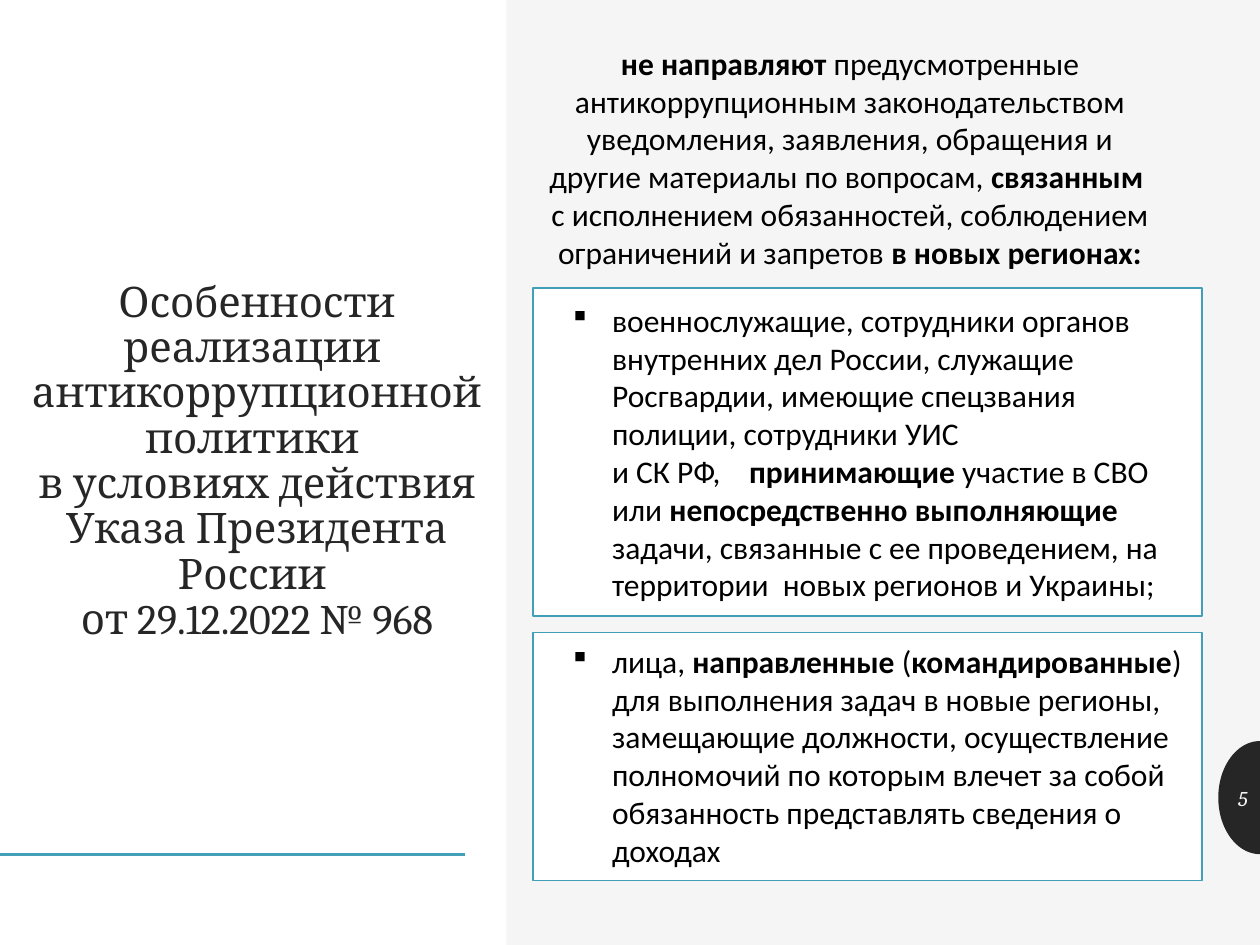
import math

from lxml import etree
from pptx import Presentation
from pptx.dml.color import RGBColor
from pptx.enum import shapes, text
from pptx.oxml.ns import qn
from pptx.util import Cm, Pt

COLORS = {"background": "F5F5F5", "panel": "FFFFFF", "dark": "262626",
          "accent": "439EB7", "body": "000000"}
RGB = {name: RGBColor.from_string(value) for name, value in COLORS.items()}


def set_font(paragraph, name, size, color):
    paragraph.font.name = name
    paragraph.font.size = Pt(size)
    paragraph.font.color.rgb = RGB[color]


def add_marked_text(paragraph, marked):
    """Add runs in which ** switches bold on and off and a newline is a line break."""
    set_font(paragraph, "Calibri", 18, "body")
    for i, part in enumerate(marked.split("**")):
        for j, line in enumerate(part.split("\n")):
            if j:
                paragraph.add_line_break()
            if line:
                run = paragraph.add_run()
                run.text = line
                run.font.bold = i % 2 == 1


prs = Presentation()
prs.slide_width, prs.slide_height = Cm(25.4), Cm(19.05)
slide = prs.slides.add_slide(prs.slide_layouts[5])
slide.background.fill.solid()
slide.background.fill.fore_color.rgb = RGB["background"]

# White left panel and the two framed boxes
for left, top, width, height, framed in [
    (0, 0, 10.21, 19.05, False),
    (10.74, 12.75, 13.49, 5.0, True),
    (10.74, 5.8, 13.49, 6.62, True),
]:
    panel = slide.shapes.add_shape(shapes.MSO_SHAPE.RECTANGLE,
                                   Cm(left), Cm(top), Cm(width), Cm(height))
    panel.shadow.inherit = False
    panel.fill.solid()
    panel.fill.fore_color.rgb = RGB["panel"]
    if framed:
        panel.line.color.rgb = RGB["accent"]
        panel.line.width = Pt(1)
    else:
        panel.line.fill.background()

# Accent line under the title
accent_line = slide.shapes.add_connector(shapes.MSO_CONNECTOR.STRAIGHT,
                                         Cm(0), Cm(17.23), Cm(9.37), Cm(17.23))
accent_line.line.color.rgb = RGB["accent"]
accent_line.line.width = Pt(2)
etree.SubElement(accent_line._element.spPr, qn("a:effectLst"))

# Half ellipse at the right edge, behind the slide number
center_x, center_y, radius_x, radius_y, steps = 25.4, 16.08, 0.84, 1.14, 48
arc = [(Cm(center_x - radius_x * math.sin(math.pi * i / steps)),
        Cm(center_y - radius_y * math.cos(math.pi * i / steps)))
       for i in range(steps + 1)]
builder = slide.shapes.build_freeform(*arc[0])
builder.add_line_segments(arc[1:], close=True)
badge = builder.convert_to_shape()
badge.shadow.inherit = False
badge.fill.solid()
badge.fill.fore_color.rgb = RGB["dark"]
badge.line.fill.background()

page_number = slide.shapes.add_textbox(Cm(24.56), Cm(15.57), Cm(0.84), Cm(1.02))
page_number.text_frame.vertical_anchor = text.MSO_ANCHOR.MIDDLE
page_number.text_frame.word_wrap = True
number = page_number.text_frame.paragraphs[0]
number.text = "5"
number.alignment = text.PP_ALIGN.RIGHT
set_font(number, "Cambria", 12, "background")
number.font.italic = True

# The title is moved in front of the white panel
title = slide.shapes.title
slide.shapes._spTree.append(title._element)
title.left, title.top, title.width, title.height = Cm(-0.33), Cm(6.32), Cm(11.02), Cm(6.78)
title.text_frame.text = ("Особенности реализации  антикоррупционной политики \v"
                         "в условиях действия Указа Президента России \v"
                         "от 29.12.2022 № 968")
title.text_frame.auto_size = text.MSO_AUTO_SIZE.NONE
title.text_frame.vertical_anchor = text.MSO_ANCHOR.BOTTOM
heading = title.text_frame.paragraphs[0]
heading.alignment = text.PP_ALIGN.CENTER
heading.line_spacing = 0.9
set_font(heading, "Cambria", 24, "dark")

intro = slide.shapes.add_textbox(Cm(10.67), Cm(0.76), Cm(12.93), Cm(4.88))
intro.text_frame.word_wrap = True
intro.text_frame.paragraphs[0].alignment = text.PP_ALIGN.CENTER
add_marked_text(
    intro.text_frame.paragraphs[0],
    "**не направляют **предусмотренные антикоррупционным законодательством "
    "уведомления, заявления, обращения и другие материалы по вопросам, "
    "**связанным \n**с исполнением обязанностей, соблюдением ограничений и запретов "
    "**в новых регионах:**")

# Bulleted groups of persons, one per framed box
persons = [
    "военнослужащие, сотрудники органов внутренних дел России, служащие Росгвардии, "
    "имеющие спецзвания полиции, сотрудники УИС \nи СК РФ,    **принимающие** участие "
    "в СВО или **непосредственно выполняющие **задачи, связанные с ее проведением, "
    "на территории  новых регионов и Украины;",
    "лица, **направленные** (**командированные**) для выполнения задач в новые регионы, "
    "замещающие должности, осуществление полномочий по которым влечет за собой "
    "обязанность представлять сведения о доходах",
]
persons_list = slide.shapes.add_textbox(Cm(11.3), Cm(5.94), Cm(12.93), Cm(12.57))
persons_list.text_frame.word_wrap = True
for i, group in enumerate(persons):
    if i:
        item = persons_list.text_frame.add_paragraph()
        item.space_before = Pt(22)
    else:
        item = persons_list.text_frame.paragraphs[0]
    add_marked_text(item, group)
    properties = item._p.get_or_add_pPr()
    properties.set("marL", str(Cm(0.79)))
    properties.set("indent", str(-Cm(0.79)))
    defaults = properties.find(qn("a:defRPr"))
    defaults.addprevious(etree.Element(qn("a:buFont"), typeface="Wingdings"))
    defaults.addprevious(etree.Element(qn("a:buChar"), char="§"))

prs.save("out.pptx")
